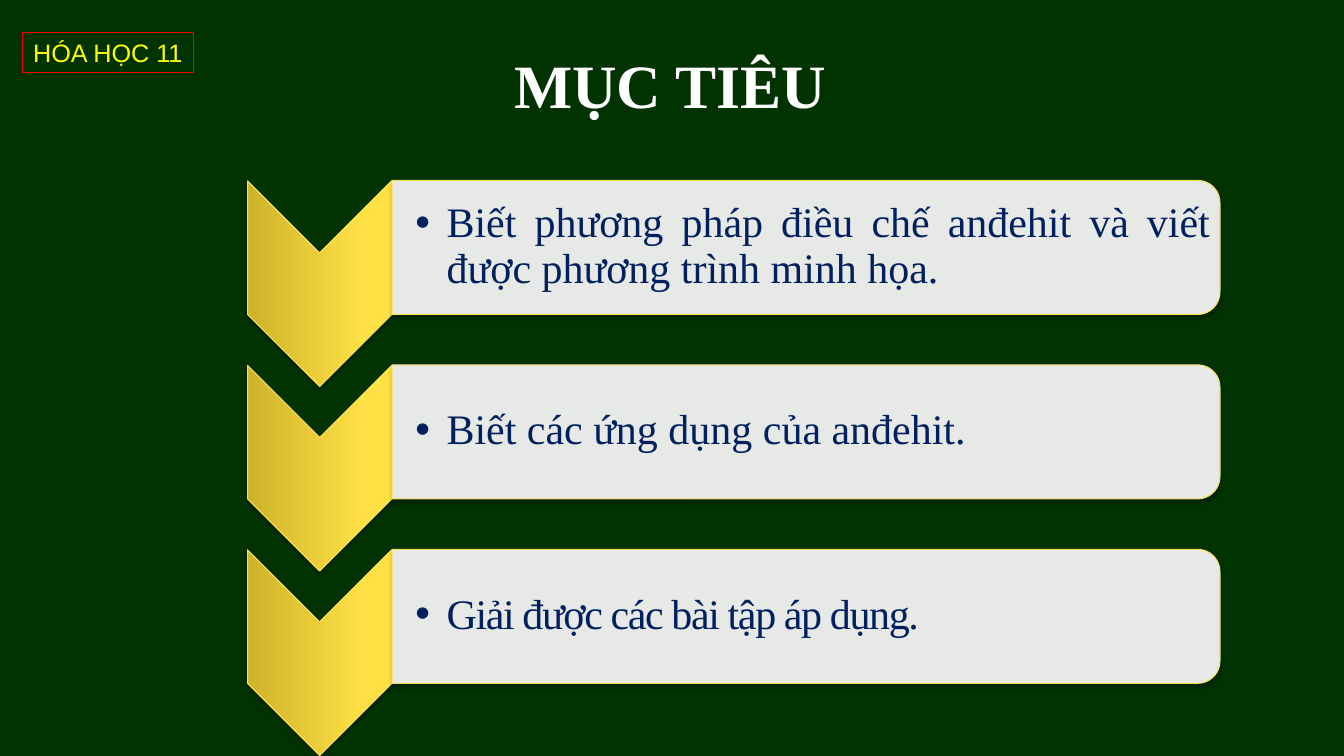
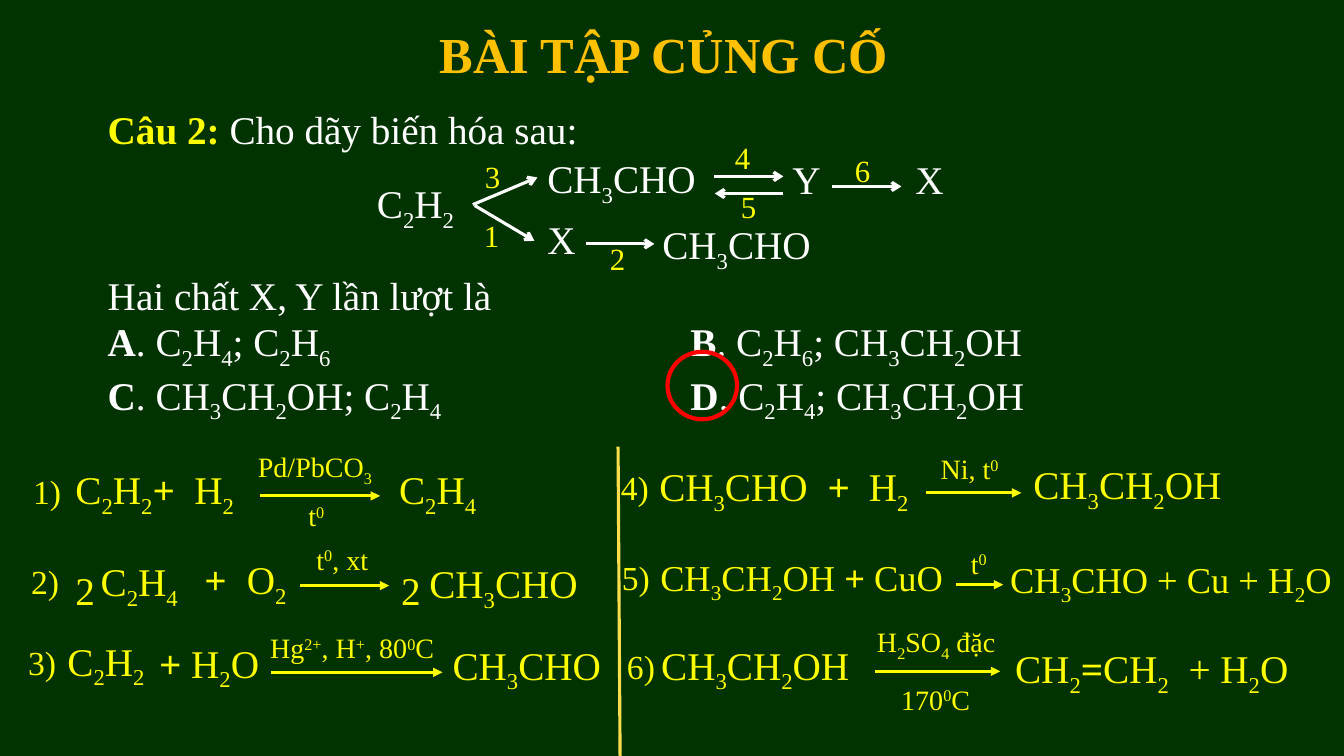
from lxml.etree import SubElement
from pptx import Presentation
from pptx.dml.color import RGBColor
from pptx.enum.shapes import MSO_CONNECTOR as CONN, MSO_SHAPE as SHAPE
from pptx.enum.text import MSO_ANCHOR as ANCHOR, PP_ALIGN as ALIGN
from pptx.oxml import parse_xml
from pptx.oxml.ns import nsdecls, qn
from pptx.util import Inches, Pt

SERIF, SANS = "Times New Roman", "Arial"
GREEN, WHITE, YELLOW, RED = "003300", "FFFFFF", "FFFF00", "FF0000"
AMBER, NAVY, GOLD, DIVIDER = "FFC000", "002060", "FBDF53", "FADD4D"
SLIDE_W, SLIDE_H = 13.33, 7.5
BASELINES = {"_": "-25000", "^": "30000"}


def rgb(color):
    return RGBColor.from_string(color)


def box(x, y, w, h):
    return [Inches(v) for v in (x, y, w, h)]


def add_run(p, text, size, color, font=SERIF, bold=False, baseline=None, spacing=None):
    r = p.add_run()
    r.text = text
    r.font.name, r.font.size, r.font.bold = font, Pt(size), bold
    r.font.color.rgb = rgb(color)
    if baseline:
        r.font._element.set("baseline", baseline)
    if spacing:
        r.font._element.set("spc", str(spacing * 100))


def add_formula(p, markup, size, color, **fmt):
    bold, plain, chars = False, "", iter(markup)

    def flush():
        if plain:
            add_run(p, plain, size, color, bold=bold, **fmt)

    for ch in chars:
        if ch in "_^*":
            flush()
            plain = ""
            if ch == "*":
                bold = not bold
            else:
                add_run(p, next(chars), size, color, bold=bold, baseline=BASELINES[ch], **fmt)
        else:
            plain += ch
    flush()


def add_text(sl, markup, x, y, size=28, color=YELLOW, w=None, h=None, **fmt):
    w = w or min(0.25 + len(markup) * size * 0.011, SLIDE_W - x)
    sp = sl.shapes.add_textbox(*box(x, y, w, h or size * 0.02))
    tf = sp.text_frame
    tf.word_wrap, tf.margin_right = True, 0
    add_formula(tf.paragraphs[0], markup, size, color, **fmt)
    return tf


def add_title(sl, text, x, y, w, h, size, color):
    sp = sl.shapes.title
    sp.left, sp.top, sp.width, sp.height = box(x, y, w, h)
    tf = sp.text_frame
    tf.vertical_anchor = ANCHOR.TOP
    p = tf.paragraphs[0]
    p.alignment = ALIGN.LEFT
    add_run(p, text, size, color, bold=True)


def add_shape(sl, kind, x, y, w, h, line, width=0.75):
    sp = sl.shapes.add_shape(kind, *box(x, y, w, h))
    sp.shadow.inherit = False
    sp.fill.background()
    sp.line.color.rgb = rgb(line)
    sp.line.width = Pt(width)
    return sp


def add_line(sl, x1, y1, x2, y2, color, head=None):
    c = sl.shapes.add_connector(CONN.STRAIGHT, *box(x1, y1, x2, y2))
    c.line.color.rgb = rgb(color)
    c.line.width = Pt(2.25)
    if head:
        SubElement(c.line._get_or_add_ln(), qn("a:tailEnd"), type=head)
    SubElement(c._element.spPr, qn("a:effectLst"))


def cast_shadow(sp):
    effects = sp._element.spPr.find(qn("a:effectLst"))
    shadow = SubElement(effects, qn("a:outerShdw"), blurRad=str(Pt(3.1)), dist=str(Pt(1.8)),
                        dir="5400000", rotWithShape="0")
    color = SubElement(shadow, qn("a:srgbClr"), val="000000")
    SubElement(color, qn("a:alpha"), val="35000")


def fill_gold(sp):
    stops = ((0, "CEB32B"), (80, "FFE045"), (100, "FFE046"))
    gs = "".join(f'<a:gs pos="{pos * 1000}"><a:srgbClr val="{c}"/></a:gs>' for pos, c in stops)
    grad = parse_xml(f'<a:gradFill {nsdecls("a")} rotWithShape="1"><a:gsLst>{gs}</a:gsLst>'
                     '<a:lin ang="16200000" scaled="0"/></a:gradFill>')
    spPr = sp._element.spPr
    spPr.replace(spPr.find(qn("a:noFill")), grad)


def fill_pale(sp):
    sp.fill.solid()
    sp.fill.fore_color.rgb = rgb(WHITE)
    color = sp._element.spPr.find(qn("a:solidFill"))[0]
    SubElement(color, qn("a:alpha"), val="90000")


def add_goal(sl, i, text, spacing):
    dy = i * 1.83
    chevron = add_shape(sl, SHAPE.CHEVRON, 2.15, 2.1 + dy, 2.04, 1.43, GOLD)
    bar = add_shape(sl, SHAPE.ROUND_2_SAME_RECTANGLE, 7.33, -1.65 + dy, 1.33, 8.21, GOLD)
    fill_gold(chevron)
    fill_pale(bar)
    for sp in (chevron, bar):
        sp.rotation = 90
        cast_shadow(sp)
    tf = add_text(sl, text, 3.89, 1.85 + dy, 30, NAVY, w=8.14, h=1.2, spacing=spacing)
    tf.vertical_anchor = ANCHOR.MIDDLE
    tf.margin_left = Inches(0.23)
    tf.margin_top = tf.margin_bottom = tf.margin_right = Inches(0.02)
    p = tf.paragraphs[0]
    p.alignment, p.line_spacing = ALIGN.JUSTIFY, 0.9
    pPr = p._p.get_or_add_pPr()
    pPr.set("marL", str(Inches(0.31)))
    pPr.set("indent", str(-Inches(0.31)))
    SubElement(pPr, qn("a:buFont"), typeface=SANS)
    SubElement(pPr, qn("a:buChar"), char="•")


def build_goals(sl):
    add_title(sl, "MỤC TIÊU", 5, 0.42, 3.34, 0.84, 44, WHITE)
    tag = add_shape(sl, SHAPE.RECTANGLE, 0.22, 0.32, 1.7, 0.4, RED)
    tag.text_frame.word_wrap = False
    add_run(tag.text_frame.paragraphs[0], "HÓA HỌC 11", 18, YELLOW, font=SANS)
    goals = (
        ("Biết phương pháp điều chế anđehit và viết được phương trình minh họa.", None),
        ("Biết các ứng dụng của anđehit.", None),
        ("Giải được các bài tập áp dụng.", -1),
    )
    for i, (text, spacing) in enumerate(goals):
        add_goal(sl, i, text, spacing)


def add_question(sl):
    tf = add_text(sl, "*Câu 2: *", 0.97, 1, w=6)
    add_run(tf.paragraphs[0], "Cho dãy biến hóa sau:", 28, WHITE)
    for markup, x, y in (
        ("Hai chất X, Y lần lượt là", 0.97, 2.64),
        ("*A*. C_2H_4; C_2H_6", 0.97, 3.1),
        ("*B*. C_2H_6; CH_3CH_2OH", 6.75, 3.1),
        ("*C*. CH_3CH_2OH; C_2H_4", 0.97, 3.63),
        ("*D*. C_2H_4; CH_3CH_2OH", 6.75, 3.63),
    ):
        add_text(sl, markup, x, y, color=WHITE)
    add_shape(sl, SHAPE.OVAL, 6.62, 3.49, 0.69, 0.67, RED, 3)


def add_scheme(sl):
    for markup, x, y in (
        ("C_2H_2", 3.64, 1.73), ("CH_3CHO", 5.33, 1.48), ("Y", 7.76, 1.49),
        ("X", 8.98, 1.49), ("X", 5.33, 2.09), ("CH_3CHO", 6.47, 2.14),
    ):
        add_text(sl, markup, x, y, color=WHITE)
    for ends in (
        (4.71, 2.04, 5.3, 2.39), (5.81, 2.42, 6.49, 2.42), (4.69, 2.03, 5.33, 1.76),
        (7.08, 1.75, 7.77, 1.75), (7.77, 1.92, 7.09, 1.92), (8.25, 1.85, 8.94, 1.85),
    ):
        add_line(sl, *ends, WHITE, "arrow")
    steps = ((4.7, 2.1), (5.95, 2.33), (4.71, 1.52), (7.19, 1.33), (7.25, 1.81), (8.38, 1.46))
    for number, (x, y) in enumerate(steps, 1):
        add_text(sl, str(number), x, y, 22)


def add_equations(sl):
    add_line(sl, 6.13, 4.43, 6.15, SLIDE_H, DIVIDER)
    numbers = ((0.23, 4.62), (0.21, 5.52), (0.18, 6.32), (6.06, 4.58), (6.07, 5.48), (6.12, 6.36))
    for number, (x, y) in enumerate(numbers, 1):
        add_text(sl, f"{number})", x, y, 24)
    terms = {
        28: (
            ("C_2H_2*+*", 0.65, 4.57), ("H_2", 1.83, 4.57), ("C_2H_4", 3.86, 4.57),
            ("2", 0.65, 5.57), ("C_2H_4", 0.9, 5.48), ("*+*", 1.93, 5.46),
            ("O_2", 2.35, 5.46), ("2", 3.88, 5.57), ("CH_3CHO", 4.16, 5.5),
            ("C_2H_2", 0.57, 6.27), ("*+* H_2O", 1.48, 6.29), ("CH_3CHO", 4.39, 6.31),
            ("CH_3CHO", 6.44, 4.54), ("*+*", 8.11, 4.54), ("H_2", 8.52, 4.54),
            ("CH_3CH_2OH", 10.15, 4.52), ("CH_3CH_2OH", 6.46, 6.31),
            ("CH_2*=*CH_2", 9.97, 6.34), ("+ H_2O", 11.69, 6.34),
        ),
        26: (("CH_3CH_2OH *+* CuO", 6.45, 5.46), ("CH_3CHO + Cu + H_2O", 9.92, 5.48)),
        20: (
            ("Pd/PbCO_3", 2.46, 4.41), ("t^0", 2.96, 4.9), ("t^0, xt", 3.04, 5.33),
            ("Hg^2^+, H^+, 80^0C", 2.58, 6.21), ("Ni, t^0", 9.23, 4.43), ("t^0", 9.53, 5.37),
            ("H_2SO_4 đặc", 8.6, 6.15), ("170^0C", 8.84, 6.72),
        ),
    }
    for size, items in terms.items():
        for markup, x, y in items:
            add_text(sl, markup, x, y, size)
    for x1, x2, y in (
        (2.58, 3.77, 4.92), (2.98, 3.86, 5.81), (2.69, 4.39, 6.67),
        (9.18, 10.13, 4.89), (9.48, 9.95, 5.8), (8.68, 9.92, 6.66),
    ):
        add_line(sl, x1, y, x2, y, YELLOW, "triangle")


def build_exercise(sl):
    add_title(sl, "BÀI TẬP CỦNG CỐ", 4.26, 0.18, 5.94, 0.71, 36, AMBER)
    add_question(sl)
    add_scheme(sl)
    add_equations(sl)


def main():
    prs = Presentation()
    prs.slide_width, prs.slide_height = Inches(SLIDE_W), Inches(SLIDE_H)
    background = prs.slide_master.background.fill
    background.solid()
    background.fore_color.rgb = rgb(GREEN)
    for build in (build_goals, build_exercise):
        build(prs.slides.add_slide(prs.slide_layouts[5]))
    prs.save("out.pptx")


if __name__ == "__main__":
    main()
